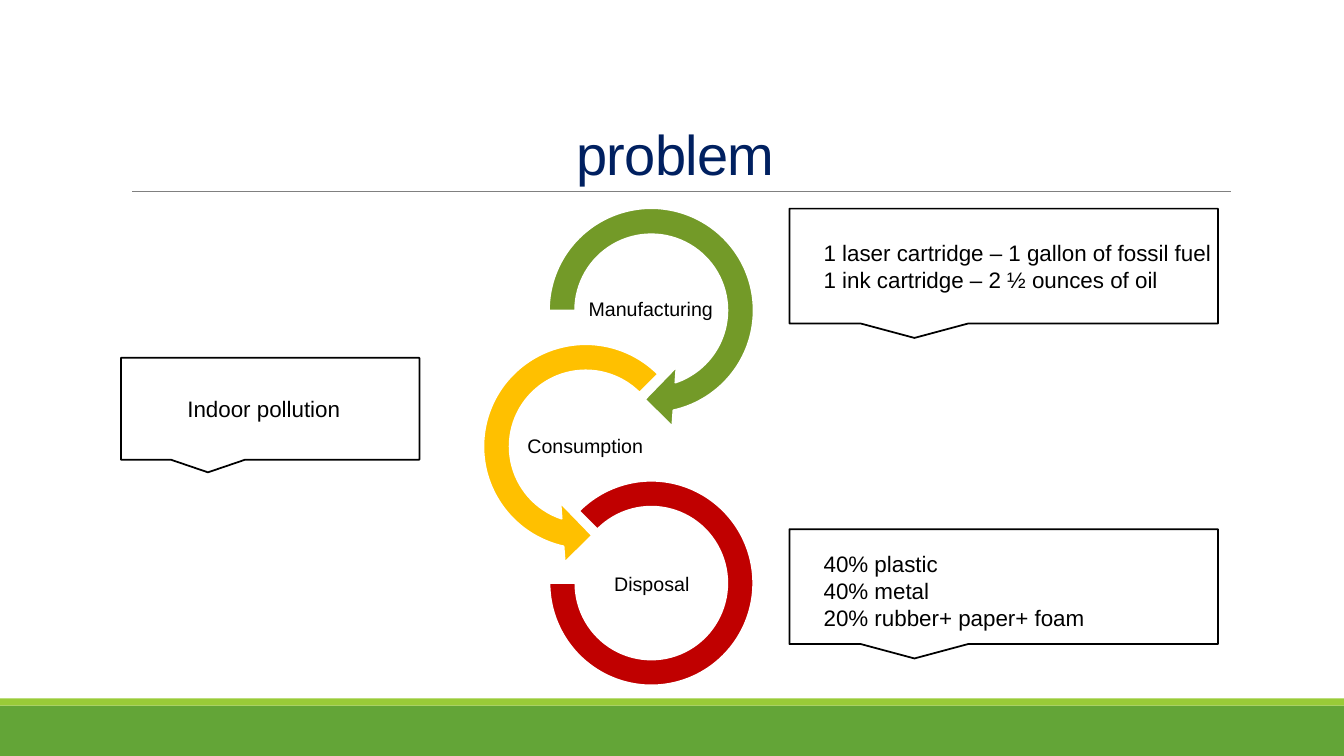
from dataclasses import dataclass

from lxml import etree
from pptx import Presentation
from pptx.dml.color import RGBColor
from pptx.enum.shapes import MSO_CONNECTOR, MSO_SHAPE
from pptx.enum.text import MSO_ANCHOR, MSO_AUTO_SIZE, PP_ALIGN
from pptx.oxml.ns import qn
from pptx.util import Emu, Pt

RECT = MSO_SHAPE.RECTANGLE
CALLOUT = MSO_SHAPE.RECTANGULAR_CALLOUT
RIGHT_ARROW = MSO_SHAPE.CIRCULAR_ARROW
LEFT_ARROW = MSO_SHAPE.LEFT_CIRCULAR_ARROW
ARC = MSO_SHAPE.BLOCK_ARC
STRAIGHT = MSO_CONNECTOR.STRAIGHT
NO_AUTOFIT = MSO_AUTO_SIZE.NONE
LEFT, CENTER = PP_ALIGN.LEFT, PP_ALIGN.CENTER
TOP, MIDDLE, BOTTOM = MSO_ANCHOR.TOP, MSO_ANCHOR.MIDDLE, MSO_ANCHOR.BOTTOM

PX = 9144  # EMU per px, 100 px to the inch


@dataclass(frozen=True)
class Theme:
    font: str = "Arial"
    title_size: float = 40
    label_size: float = 14
    note_size: float = 16
    title: str = "002060"
    text: str = "000000"
    paper: str = "FFFFFF"
    rule: str = "808080"
    footer: str = "63A537"
    stripe: str = "99CB38"
    manufacturing: str = "739A28"
    consumption: str = "FFC000"
    disposal: str = "C00000"
    outline: float = 1.25
    hairline: float = 0.5


def emu(*lengths):
    return [Emu(n * PX) for n in lengths]


def rgb(value):
    return RGBColor.from_string(value)


class SlideBuilder:
    def __init__(self, slide, theme):
        self.s = slide
        self.theme = theme

    def add_text(self, tf, lines, size, color, align=LEFT, anchor=TOP, spacing=None):
        """Fill a text frame, one paragraph a line, and return its runs."""
        tf.word_wrap = True
        tf.auto_size = NO_AUTOFIT
        tf.vertical_anchor = anchor
        runs = []
        for i, line in enumerate(lines):
            p = tf.add_paragraph() if i else tf.paragraphs[0]
            p.alignment = align
            if spacing:
                p.line_spacing = spacing
            r = p.add_run()
            r.text = line
            r.font.name = self.theme.font
            r.font.size = Pt(size)
            r.font.color.rgb = rgb(color)
            runs.append(r)
        return runs

    def title(self, box, text):
        sp = self.s.shapes.title
        sp.left, sp.top, sp.width, sp.height = emu(*box)
        t = self.theme
        runs = self.add_text(sp.text_frame, [text], t.title_size, t.title,
                             CENTER, BOTTOM, 0.85)
        for r in runs:
            r._r.get_or_add_rPr().set("spc", "-50")

    def shape(self, kind, box, fill, line=None, adjustments=()):
        sp = self.s.shapes.add_shape(kind, *emu(*box))
        sp.shadow.inherit = False
        sp.fill.solid()
        sp.fill.fore_color.rgb = rgb(fill)
        if line:
            sp.line.color.rgb = rgb(line)
            sp.line.width = Pt(self.theme.outline)
        else:
            sp.line.fill.background()
        for i, value in enumerate(adjustments):
            sp.adjustments[i] = value

    def rule(self, x1, y1, x2, y2):
        line = self.s.shapes.add_connector(STRAIGHT, *emu(x1, y1, x2, y2))
        line.line.color.rgb = rgb(self.theme.rule)
        line.line.width = Pt(self.theme.hairline)
        etree.SubElement(line._element.spPr, qn("a:effectLst"))

    def label(self, left, top, text):
        tf = self.s.shapes.add_textbox(*emu(left, top, 131, 65)).text_frame
        tf.margin_left, tf.margin_top, tf.margin_right, tf.margin_bottom = emu(1, 1, 1, 1)
        t = self.theme
        self.add_text(tf, [text], t.label_size, t.text, CENTER, MIDDLE, 0.9)

    def callout(self, box, text_box, lines):
        t = self.theme
        self.shape(CALLOUT, box, t.paper, t.text)
        tf = self.s.shapes.add_textbox(*emu(*text_box)).text_frame
        self.add_text(tf, lines, t.note_size, t.text)


def main():
    prs = Presentation()
    prs.slide_width, prs.slide_height = emu(1333, 750)
    t = Theme()
    b = SlideBuilder(prs.slides.add_slide(prs.slide_layouts[5]), t)

    b.shape(RECT, (0, 700, 1333, 50), t.footer)
    b.shape(RECT, (0, 693, 1333, 7), t.stripe)
    b.rule(131, 190, 1221, 190)
    b.title((120, 31, 1100, 159), "problem")

    # Angles are in units of 100000/60000 degree, the other values are ratios
    stages = [
        (RIGHT_ARROW, (528, 190, 236, 236), t.manufacturing,
         (0.11, 11.423, 45, 108, 0.125), (580, 275), "Manufacturing"),
        (LEFT_ARROW, (463, 325, 236, 236), t.consumption,
         (0.11, 11.423, 63, 189, 0.125), (515, 411), "Consumption"),
        (ARC, (545, 477, 202, 203), t.disposal,
         (135, 108, 0.127), (581, 548), "Disposal"),
    ]
    for kind, box, color, adjustments, label_at, text in stages:
        b.shape(kind, box, color, t.paper, adjustments)
        b.label(*label_at, text)

    b.callout((783, 207, 425, 114), (807, 232, 437, 64),
              ["1 laser cartridge – 1 gallon of fossil fuel",
               "1 ink cartridge – 2 ½ ounces of oil"])
    b.callout((120, 355, 296, 101), (176, 387, 380, 37), ["Indoor pollution"])
    b.callout((783, 525, 425, 114), (807, 541, 382, 91),
              ["40% plastic", "40% metal", "20% rubber+ paper+ foam"])

    prs.save("out.pptx")


if __name__ == "__main__":
    main()
